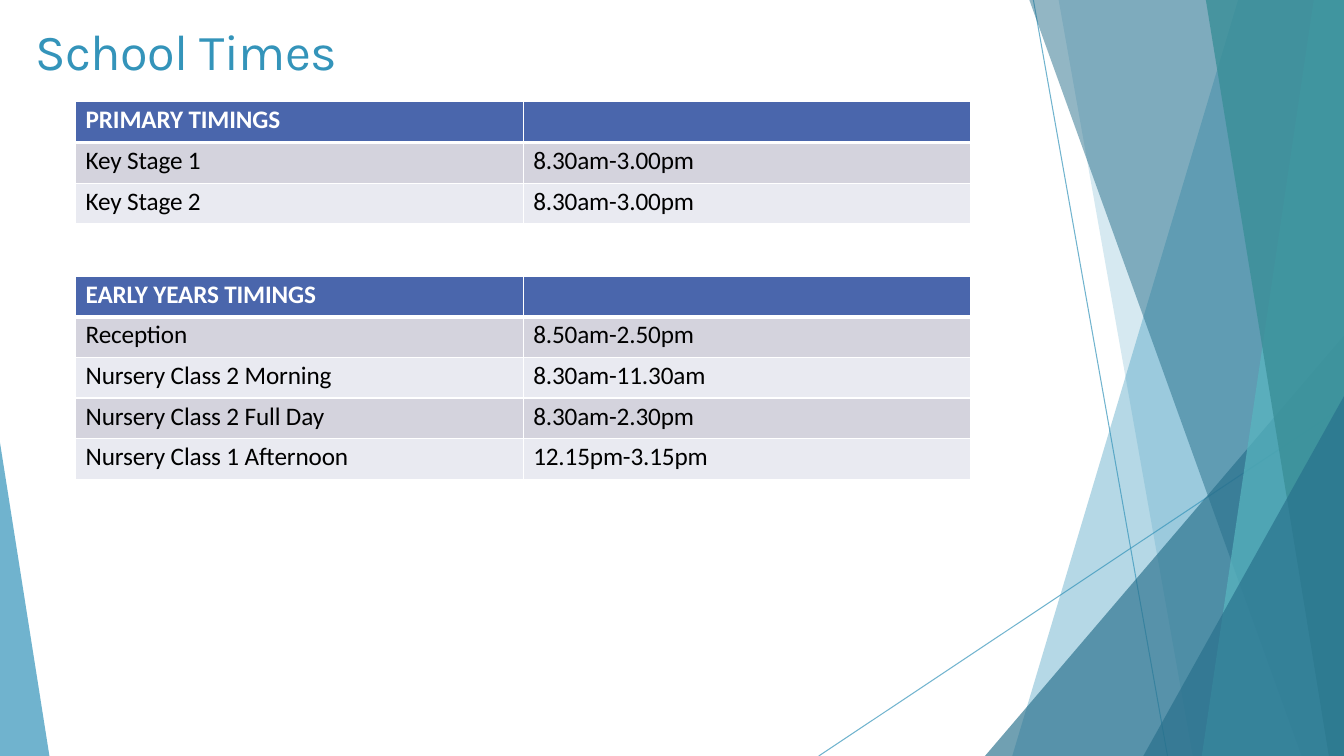
from lxml.etree import SubElement
from pptx import Presentation
from pptx.dml.color import RGBColor
from pptx.enum.shapes import MSO_CONNECTOR, MSO_SHAPE
from pptx.enum.text import MSO_ANCHOR, PP_ALIGN
from pptx.oxml.ns import qn
from pptx.util import Inches, Pt

WHITE = RGBColor(0xFF, 0xFF, 0xFF)
BLACK = RGBColor(0x00, 0x00, 0x00)
SKY = RGBColor(0x34, 0x94, 0xBA)
OCEAN = RGBColor(0x27, 0x6F, 0x8B)
AQUA = RGBColor(0x58, 0xB6, 0xC0)
TEAL = RGBColor(0x3A, 0x8F, 0x98)
HEADER_BLUE = RGBColor(0x4A, 0x66, 0xAC)
BAND_DARK = RGBColor(0xD4, 0xD3, 0xDD)
BAND_LIGHT = RGBColor(0xE9, 0xEA, 0xF1)

TITLE_FONT = {"name": "Karla", "size": Pt(36), "bold": False}
BODY_FONT = {"name": "Calibri", "size": Pt(18), "bold": False}
HEADER_FONT = {**BODY_FONT, "bold": True}
CELL_FORMAT = {"margin_left": Inches(0.1), "margin_top": Inches(0.03),
               "margin_right": 0, "margin_bottom": 0}
TITLE_FORMAT = {"margin_left": Inches(0.01), "margin_top": Inches(0.01),
                "margin_right": 0, "margin_bottom": 0,
                "word_wrap": True, "vertical_anchor": MSO_ANCHOR.TOP}
TABLE_FLAGS = {"first_row": False, "horz_banding": False}

ROW_HEIGHT = 5.38
TABLE_LEFT, TABLE_WIDTH = 5.63, 66.6

# Top left x, bottom left x, colour, opacity
BACK_VEILS = [(92.12, 75.32, SKY, 36), (78.77, 88.75, SKY, 20)]
FRONT_VEILS = [(76.59, 96.85, OCEAN, 50), (97.75, 89.42, AQUA, 70),
               (89.72, 98.87, TEAL, 80)]

PRIMARY = [("PRIMARY TIMINGS", ""),
           ("Key Stage 1", "8.30am-3.00pm"),
           ("Key Stage 2", "8.30am-3.00pm")]
EARLY_YEARS = [("EARLY YEARS TIMINGS", ""),
               ("Reception", "8.50am-2.50pm"),
               ("Nursery Class 2 Morning", "8.30am-11.30am"),
               ("Nursery Class 2 Full Day", "8.30am-2.30pm"),
               ("Nursery Class 1 Afternoon", "12.15pm-3.15pm")]


def apply(target, values):
    for key, value in values.items():
        setattr(target, key, value)


def set_opacity(parent, percent):
    """Make the solid colour found under parent translucent."""
    colour = next(parent.iter(qn("a:srgbClr")))
    SubElement(colour, qn("a:alpha")).set("val", str(percent * 1000))


class SlideBuilder:
    """Draws on one slide; every length is a percentage of the slide's size."""

    def __init__(self, deck):
        self.width, self.height = deck.slide_width, deck.slide_height
        self.slide = deck.slides.add_slide(deck.slide_layouts[6])
        self.shapes = self.slide.shapes

    def x(self, share):
        return round(self.width * share / 100)

    def y(self, share):
        return round(self.height * share / 100)

    def box(self, left, top, width, height):
        return self.x(left), self.y(top), self.x(width), self.y(height)

    def paint(self, shape, colour, opacity):
        shape.shadow.inherit = False
        shape.fill.solid()
        shape.fill.fore_color.rgb = colour
        shape.line.fill.background()
        set_opacity(shape._element.spPr, opacity)

    def hairline(self, x1, y1, x2, y2):
        line = self.shapes.add_connector(
            MSO_CONNECTOR.STRAIGHT, self.x(x1), self.y(y1), self.x(x2), self.y(y2))
        line.line.color.rgb = SKY
        line.line.width = Pt(0.75)
        properties = line._element.spPr
        set_opacity(properties, 70)
        SubElement(properties, qn("a:effectLst"))

    def veil(self, top_x, bottom_x, colour, opacity):
        """Full-height panel that reaches the right edge, with a slanted left side."""
        outline = self.shapes.build_freeform(self.x(top_x), 0)
        outline.add_line_segments(
            [(self.width, 0), (self.width, self.height), (self.x(bottom_x), self.height)])
        self.paint(outline.convert_to_shape(), colour, opacity)

    def corner(self, left, top, width, peak, colour, opacity):
        """Triangle standing on the bottom edge; peak runs from 0 (left) to 1 (right)."""
        triangle = self.shapes.add_shape(
            MSO_SHAPE.ISOSCELES_TRIANGLE, *self.box(left, top, width, 100 - top))
        triangle.adjustments[0] = peak
        self.paint(triangle, colour, opacity)

    def fill_text(self, frame, text, font, colour, before, spacing):
        paragraph = frame.paragraphs[0]
        paragraph.alignment = PP_ALIGN.LEFT
        paragraph.space_before = Pt(before)
        apply(paragraph.font, font)
        if text:
            run = paragraph.add_run()
            run.text = text
            apply(run.font, font)
            run.font.color.rgb = colour
            run._r.get_or_add_rPr().set("spc", str(spacing))

    def title(self, text, left, top, width, height):
        frame = self.shapes.add_textbox(*self.box(left, top, width, height)).text_frame
        apply(frame, TITLE_FORMAT)
        self.fill_text(frame, text, TITLE_FONT, SKY, 0.9, -40)

    def borders(self, cell, top, bottom):
        properties = cell._tc.get_or_add_tcPr()
        for side, points in (("L", 1), ("R", 1), ("T", top), ("B", bottom)):
            edge = SubElement(properties, qn(f"a:ln{side}"))
            edge.set("w", str(Pt(points)))
            fill = SubElement(edge, qn("a:solidFill"))
            SubElement(fill, qn("a:srgbClr")).set("val", str(WHITE))

    def timetable(self, top, rows):
        table = self.shapes.add_table(
            len(rows), len(rows[0]),
            *self.box(TABLE_LEFT, top, TABLE_WIDTH, ROW_HEIGHT * len(rows))).table
        apply(table, TABLE_FLAGS)
        for index, texts in enumerate(rows):
            header = index == 0
            band = HEADER_BLUE if header else (BAND_LIGHT, BAND_DARK)[index % 2]
            for column, text in enumerate(texts):
                cell = table.cell(index, column)
                apply(cell, CELL_FORMAT)
                self.borders(cell, 3 if index == 1 else 1, 3 if header else 1)
                cell.fill.solid()
                cell.fill.fore_color.rgb = band
                self.fill_text(cell.text_frame, text,
                               HEADER_FONT if header else BODY_FONT,
                               WHITE if header else BLACK, 2.4, -10)


def main():
    deck = Presentation()
    deck.slide_width, deck.slide_height = Inches(13.33), Inches(7.5)
    page = SlideBuilder(deck)

    page.hairline(76.89, 0, 86.87, 100)
    page.hairline(100, 53.73, 60.92, 100)
    for veil in BACK_VEILS:
        page.veil(*veil)
    page.corner(73.29, 44.4, 26.71, 1, OCEAN, 66)
    for veil in FRONT_VEILS:
        page.veil(*veil)
    page.corner(85.07, 52.4, 14.93, 1, OCEAN, 66)
    page.corner(0, 58.53, 3.68, 0, SKY, 70)

    page.title("School Times", 2.55, 2.53, 28.13, 8.27)
    page.timetable(36.53, EARLY_YEARS)
    page.timetable(13.47, PRIMARY)
    deck.save("out.pptx")


if __name__ == "__main__":
    main()
